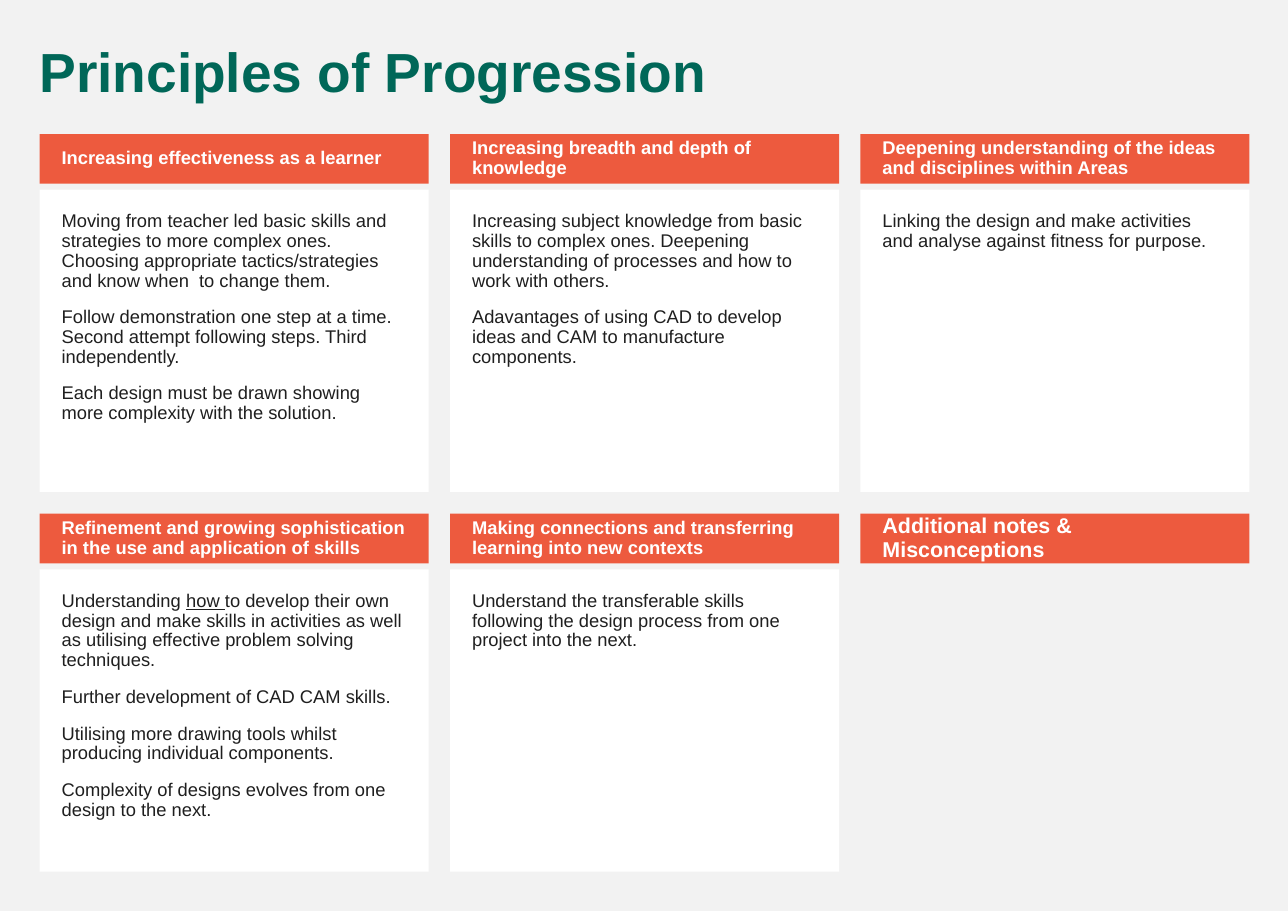
from pptx import Presentation
from pptx.dml.color import RGBColor
from pptx.enum.shapes import MSO_SHAPE
from pptx.enum.text import MSO_ANCHOR, PP_ALIGN
from pptx.util import Pt

# Grid of cards, in points
LEFT, TOP = 25.92, 87.6
COLUMN_PITCH, ROW_PITCH = 268.2, 248.2
CARD_WIDTH = 254.2
HEADER_HEIGHT, BODY_OFFSET, BODY_HEIGHT = 32.4, 36.4, 197.6

# Text frame and font formats
HEADER_FRAME = {"margin_left": Pt(14.4), "margin_top": Pt(3.6), "margin_right": Pt(7.2),
                "margin_bottom": Pt(3.6), "vertical_anchor": MSO_ANCHOR.MIDDLE}
BODY_FRAME = {"margin_left": Pt(14.4), "margin_top": Pt(14.4), "margin_right": Pt(14.4),
              "margin_bottom": Pt(14.4), "vertical_anchor": MSO_ANCHOR.TOP}
TITLE_FRAME = {"vertical_anchor": MSO_ANCHOR.TOP}
PARAGRAPH = {"alignment": PP_ALIGN.LEFT, "line_spacing": 0.9, "space_before": Pt(11)}

# Heading, heading size and paragraphs; a paragraph is a list of runs,
# in which every second run is underlined
CARDS = [
    ("Increasing effectiveness as a learner", 12, [
        ["Moving from teacher led basic skills and strategies to more complex ones.  "
         "Choosing appropriate tactics/strategies and know when  to change them."],
        ["Follow demonstration one step at a time. Second attempt following steps. "
         "Third independently."],
        ["Each design must be drawn showing more complexity with the solution."]]),
    ("Increasing breadth and depth of knowledge", 12, [
        ["Increasing subject knowledge from basic skills to complex ones. Deepening "
         "understanding of processes and how to work with others."],
        ["Adavantages of using CAD to develop ideas and CAM to manufacture components."]]),
    ("Deepening understanding of the ideas and disciplines within Areas", 12, [
        ["Linking the design and make activities and analyse against fitness for purpose."]]),
    ("Refinement and growing sophistication in the use and application of skills", 12, [
        ["Understanding ", "how ",
         "to develop their own design and make skills in activities as well as "
         "utilising effective problem solving techniques."],
        ["Further development of CAD CAM skills."],
        ["Utilising more drawing tools whilst producing individual components."],
        ["Complexity of designs evolves from one design to the next."]]),
    ("Making connections and transferring learning into new contexts", 12, [
        ["Understand the transferable skills following the design process from "
         "one project into the next."]]),
    ("Additional notes & Misconceptions", 14, []),
]


def color(value):
    return RGBColor.from_string(value)


def set_formats(target, formats):
    for name, value in formats.items():
        setattr(target, name, value)


class CardSlide:
    """Holds the slide and its style."""

    font_name = "Arial"
    background, accent, paper = "F2F2F2", "ED5A3E", "FFFFFF"
    title_color, body_color = "006758", "1F1F1F"

    def __init__(self, slide):
        self.slide = slide
        fill = slide.background.fill
        fill.solid()
        fill.fore_color.rgb = color(self.background)

    def add_text(self, shape, paragraphs, frame_format, size, text_color, bold=False):
        frame = shape.text_frame
        set_formats(frame, {"word_wrap": True, **frame_format})
        for index, runs in enumerate(paragraphs):
            paragraph = frame.add_paragraph() if index else frame.paragraphs[0]
            set_formats(paragraph, PARAGRAPH)
            for position, text in enumerate(runs):
                run = paragraph.add_run()
                run.text = text
                set_formats(run.font, {"name": self.font_name, "size": Pt(size),
                                       "bold": bold, "underline": position % 2 == 1})
                run.font.color.rgb = color(text_color)

    def title(self, text, left, top, width, height):
        box = self.slide.shapes.add_textbox(Pt(left), Pt(top), Pt(width), Pt(height))
        self.add_text(box, [[text]], TITLE_FRAME, 36, self.title_color, bold=True)

    def panel(self, left, top, height, fill_color):
        shape = self.slide.shapes.add_shape(
            MSO_SHAPE.RECTANGLE, Pt(left), Pt(top), Pt(CARD_WIDTH), Pt(height))
        shape.shadow.inherit = False
        shape.fill.solid()
        shape.fill.fore_color.rgb = color(fill_color)
        shape.line.fill.background()
        return shape

    def card(self, left, top, heading, heading_size, paragraphs):
        if paragraphs:
            body = self.panel(left, top + BODY_OFFSET, BODY_HEIGHT, self.paper)
            self.add_text(body, paragraphs, BODY_FRAME, 12, self.body_color)
        header = self.panel(left, top, HEADER_HEIGHT, self.accent)
        self.add_text(header, [[heading]], HEADER_FRAME, heading_size, self.paper, bold=True)


def main():
    presentation = Presentation()
    set_formats(presentation, {"slide_width": Pt(841.68), "slide_height": Pt(595.44)})
    page = CardSlide(presentation.slides.add_slide(presentation.slide_layouts[6]))

    # Title
    page.title("Principles of Progression", 18.72, 25.92, 797.8, 46.8)

    # Three cards to a row
    for index, (heading, heading_size, paragraphs) in enumerate(CARDS):
        row, column = divmod(index, 3)
        page.card(LEFT + column * COLUMN_PITCH, TOP + row * ROW_PITCH,
                  heading, heading_size, paragraphs)

    presentation.save("out.pptx")


if __name__ == "__main__":
    main()
